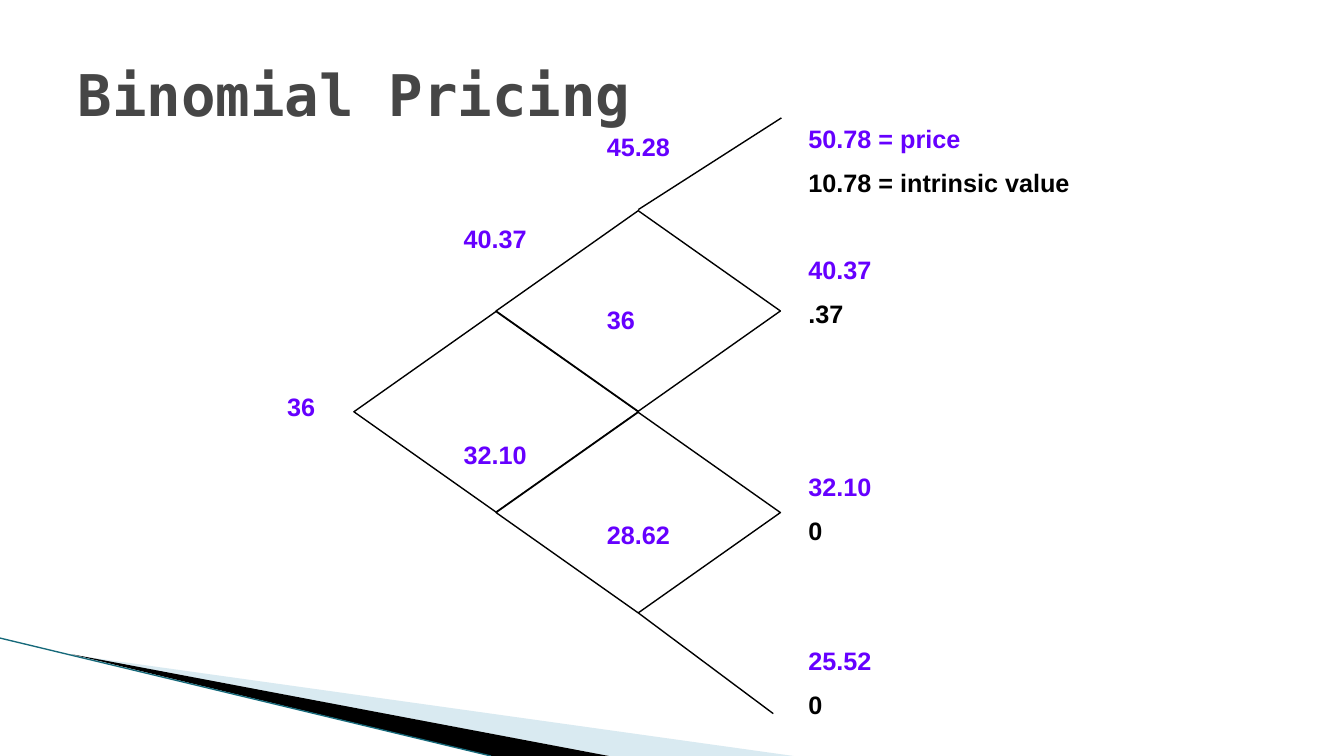
from lxml import etree
from pptx import Presentation
from pptx.dml.color import RGBColor as Color
from pptx.enum.shapes import MSO_CONNECTOR as Connector, MSO_SHAPE as Preset
from pptx.enum.text import MSO_ANCHOR as Anchor, MSO_AUTO_SIZE as AutoSize, PP_ALIGN as Align
from pptx.oxml.ns import qn
from pptx.util import Inches, Pt

COLORS = {"price": "6600FF", "value": "000000", "title": "464646", "line": "000000",
          "node": "FFFFFF", "pale": "A0CBDC", "dark": "000000", "edge": "16697A"}
LABEL = {"name": "Arial", "size": Pt(18), "bold": True}
TITLE = {"name": "DejaVu Sans Mono", "size": Pt(41), "bold": True}
GAP, ROW = 9.97, 30.65


class TreeSlide:
    """Hold the current slide and draw its elements in one style."""

    def __init__(self, presentation):
        self.slide = presentation.slides.add_slide(presentation.slide_layouts[5])
        self.shapes = self.slide.shapes

    def color(self, name):
        return Color.from_string(COLORS[name])

    def apply(self, target, values):
        for key, value in values.items():
            setattr(target, key, value)

    def set_text(self, paragraph, text, style, color):
        paragraph.text = text
        self.apply(paragraph.font, style)
        paragraph.font.color.rgb = self.color(color)

    def title(self, text, box):
        shape = self.shapes.title
        self.apply(shape, dict(zip(("left", "top", "width", "height"), map(Inches, box))))
        self.apply(shape.text_frame, {"vertical_anchor": Anchor.MIDDLE, "word_wrap": True,
                                      "auto_size": AutoSize.NONE})
        paragraph = shape.text_frame.paragraphs[0]
        self.set_text(paragraph, text, TITLE, "title")
        paragraph.alignment = Align.LEFT

    def labels(self, box, entries):
        """Place (row, text, color) entries on a fixed row pitch."""
        frame = self.shapes.add_textbox(*map(Inches, box)).text_frame
        frame.word_wrap = True
        previous = None
        for row, text, color in entries:
            if previous is None:
                paragraph = frame.paragraphs[0]
            else:
                paragraph = frame.add_paragraph()
                paragraph.space_before = Pt(GAP + ROW * (row - previous - 1))
            self.set_text(paragraph, text, LABEL, color)
            previous = row

    def diamond(self, left, top):
        shape = self.shapes.add_shape(Preset.DIAMOND, *map(Inches, (left, top, 2.82, 1.99)))
        shape.shadow.inherit = False
        shape.fill.solid()
        shape.fill.fore_color.rgb = self.color("node")
        shape.line.color.rgb = self.color("line")
        shape.line.width = Pt(1)

    def line(self, start, end, color="line", width=1):
        connector = self.shapes.add_connector(Connector.STRAIGHT, *map(Inches, start + end))
        connector.line.color.rgb = self.color(color)
        connector.line.width = Pt(width)
        etree.SubElement(connector._element.spPr, qn("a:effectLst"))

    def wedge(self, points, color, opacity=100):
        start, *others = [tuple(map(Inches, point)) for point in points]
        builder = self.shapes.build_freeform(*start)
        builder.add_line_segments(others, close=True)
        shape = builder.convert_to_shape()
        shape.shadow.inherit = False
        shape.fill.solid()
        shape.fill.fore_color.rgb = self.color(color)
        shape.line.fill.background()
        if opacity < 100:
            fill = shape._element.spPr.find(qn("a:solidFill"))
            etree.SubElement(fill[0], qn("a:alpha"), val=str(opacity * 1000))


def main():
    presentation = Presentation()
    presentation.slide_width, presentation.slide_height = Inches(13.33), Inches(7.5)
    tree = TreeSlide(presentation)

    tree.wedge([(0.73, 6.5), (7.87, 7.5), (6.04, 7.5)], "pale", 40)
    tree.wedge([(0.71, 6.49), (6.04, 7.5), (4.87, 7.5)], "dark")
    tree.line((0, 6.33), (4.87, 7.5), "edge", 0.95)

    outcomes = [(0, "50.78 = price", "10.78 = intrinsic value"), (3, "40.37", ".37"),
                (8, "32.10", "0"), (12, "25.52", "0")]
    tree.labels((7.92, 1.17, 3.67, 6.27),
                [entry for row, price, value in outcomes
                 for entry in ((row, price, "price"), (row + 1, value, "value"))])

    for left, top in ((3.51, 3.09), (4.92, 4.09), (4.92, 2.09)):
        tree.diamond(left, top)
    tree.line((6.33, 2.08), (7.75, 1.17))
    tree.line((6.33, 6.08), (7.67, 7.08))

    steps = [((5.92, 1.25, 1.33, 4.91), [(0, "45.28"), (4, "36"), (9, "28.62")]),
             ((2.75, 3.83, 1, 0.85), [(0, "36")]),
             ((4.5, 2.17, 1.5, 3.11), [(0, "40.37"), (5, "32.10")])]
    for box, prices in steps:
        tree.labels(box, [(row, price, "price") for row, price in prices])

    tree.title("Binomial Pricing", (0.67, 0.3, 12, 1.25))
    presentation.save("out.pptx")


if __name__ == "__main__":
    main()
